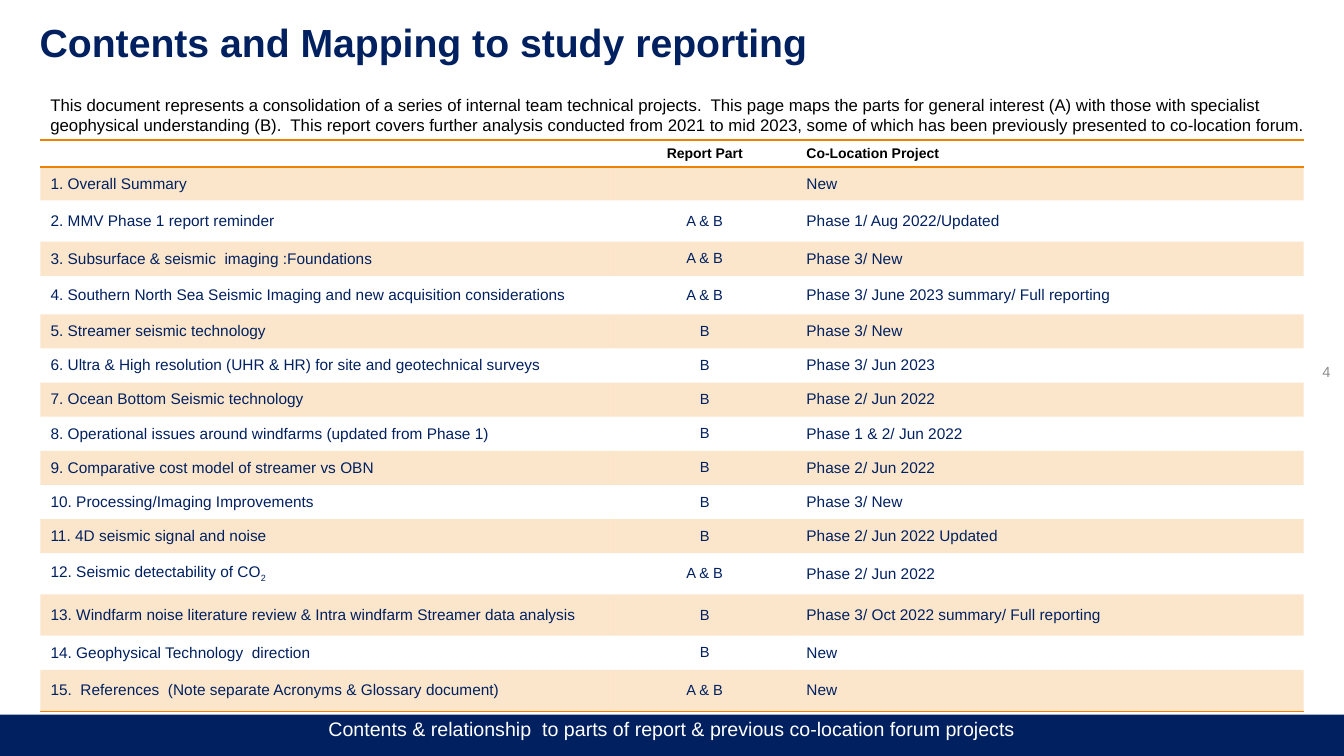
from dataclasses import dataclass

from lxml.etree import SubElement
from pptx import Presentation
from pptx.dml.color import RGBColor
from pptx.enum.shapes import MSO_SHAPE
from pptx.enum.text import MSO_ANCHOR, PP_ALIGN
from pptx.oxml.ns import qn
from pptx.util import Cm, Pt


@dataclass(frozen=True)
class Theme:
    font: str = "Arial"
    navy: str = "002060"
    amber: str = "EF8200"
    black: str = "000000"
    grey: str = "8C8C8C"
    white: str = "FFFFFF"
    title: float = 28
    foot: float = 14
    intro: float = 12
    cell: float = 11
    small: float = 10.5
    head: float = 10


THEME = Theme()
PLAIN = "{2D5ABB26-0587-4C30-8999-92F81FD0307C}"  # table style without grid
WIDTHS = [14.43, 4.62, 12.78]
HEAD = ("", "Report Part", "Co-Location Project")
HEAD_HIGH = 0.64
# Topic, report part, project, row height in cm
TOPICS = [
    ("1. Overall Summary", "", "New", 0.84),
    ("2. MMV Phase 1 report reminder", "A & B", "Phase 1/ Aug 2022/Updated", 1.04),
    ("3. Subsurface & seismic  imaging :Foundations", "A & B", "Phase 3/ New", 0.86),
    ("4. Southern North Sea Seismic Imaging and new acquisition considerations",
     "A & B", "Phase 3/ June 2023 summary/ Full reporting", 0.97),
    ("5. Streamer seismic technology", "B", "Phase 3/ New", 0.86),
    ("6. Ultra & High resolution (UHR & HR) for site and geotechnical surveys",
     "B", "Phase 3/ Jun 2023", 0.86),
    ("7. Ocean Bottom Seismic technology", "B", "Phase 2/ Jun 2022", 0.86),
    ("8. Operational issues around windfarms (updated from Phase 1)",
     "B", "Phase 1 & 2/ Jun 2022", 0.86),
    ("9. Comparative cost model of streamer vs OBN", "B", "Phase 2/ Jun 2022", 0.86),
    ("10. Processing/Imaging Improvements", "B", "Phase 3/ New", 0.86),
    ("11. 4D seismic signal and noise", "B", "Phase 2/ Jun 2022 Updated", 0.86),
    ("12. Seismic detectability of CO_2", "A & B", "Phase 2/ Jun 2022", 1.04),
    ("13. Windfarm noise literature review & Intra windfarm Streamer data analysis",
     "B", "Phase 3/ Oct 2022 summary/ Full reporting", 1.04),
    ("14. Geophysical Technology  direction", "B", "New", 0.86),
    ("15.  References  (Note separate Acronyms & Glossary document)",
     "A & B", "New", 1.04),
]


def write(frame, text, size, color, bold=False, align=PP_ALIGN.LEFT):
    """Fill a frame with one paragraph; an underscore starts a subscript."""
    frame.word_wrap = True
    para = frame.paragraphs[0]
    para.alignment = align
    font = para.font
    font.name, font.size, font.bold = THEME.font, Pt(size), bold
    font.color.rgb = RGBColor.from_string(color)
    main, _, sub = text.partition("_")
    if main:
        para.add_run().text = main
    else:
        # Keeps an empty cell from stretching its row
        SubElement(para._p, qn("a:endParaRPr")).set("sz", str(int(size * 100)))
    if sub:
        run = para.add_run()
        run.text = sub
        run.font._element.set("baseline", "-25000")
    return para


def add_title(slide, box):
    title = slide.shapes.title
    title.left, title.top, title.width, title.height = map(Cm, box)
    frame = title.text_frame
    frame.margin_left = frame.margin_top = 0
    frame.margin_right, frame.margin_bottom = Cm(0.25), Cm(0.13)
    frame.vertical_anchor = MSO_ANCHOR.MIDDLE
    para = write(frame, "Contents and Mapping to study reporting",
                 THEME.title, THEME.navy, True)
    para.line_spacing = 0.9


def add_note(slide, box, text, size, color, align=PP_ALIGN.LEFT,
             anchor=MSO_ANCHOR.TOP):
    frame = slide.shapes.add_textbox(*map(Cm, box)).text_frame
    frame.vertical_anchor = anchor
    write(frame, text, size, color, align=align)


def rule(cell, *sides):
    """Draw amber lines on the given sides, in the order top, bottom."""
    props = cell._tc.get_or_add_tcPr()
    for side in sides:
        line = SubElement(props, qn(f"a:{side}"), w=str(Pt(1)))
        fill = SubElement(line, qn("a:solidFill"))
        SubElement(fill, qn("a:srgbClr"), val=THEME.amber)


def shade(cell, band):
    """Tint a banded cell with see-through amber, leave others clear."""
    if not band:
        cell.fill.background()
        return
    cell.fill.solid()
    cell.fill.fore_color.rgb = RGBColor.from_string(THEME.amber)
    tint = cell._tc.tcPr.find(qn("a:solidFill")).find(qn("a:srgbClr"))
    SubElement(tint, qn("a:alpha"), val="20000")


def add_map(slide, left, top):
    rows = [(*HEAD, HEAD_HIGH), *TOPICS]
    high = sum(row[-1] for row in rows)
    table = slide.shapes.add_table(len(rows), len(WIDTHS), Cm(left), Cm(top),
                                   Cm(sum(WIDTHS)), Cm(high)).table
    table.first_row = table.horz_banding = False
    table._tbl.tblPr.find(qn("a:tableStyleId")).text = PLAIN
    for col, wide in zip(table.columns, WIDTHS):
        col.width = Cm(wide)

    for r, (*texts, high) in enumerate(rows):
        table.rows[r].height = Cm(high)
        for c, text in enumerate(texts):
            cell = table.cell(r, c)
            cell.vertical_anchor = MSO_ANCHOR.MIDDLE
            align = PP_ALIGN.CENTER if c == 1 else PP_ALIGN.LEFT
            if r == 0:
                write(cell.text_frame, text, THEME.head, THEME.black, True, align)
                rule(cell, "lnT", "lnB")
            else:
                size = THEME.small if c == 1 else THEME.cell
                write(cell.text_frame, text, size, THEME.navy, align=align)
            if r == len(rows) - 1:
                rule(cell, "lnB")
            shade(cell, r % 2 == 1)


def add_foot(slide, box):
    bar = slide.shapes.add_shape(MSO_SHAPE.RECTANGLE, *map(Cm, box))
    bar.shadow.inherit = False
    bar.fill.solid()
    bar.fill.fore_color.rgb = RGBColor.from_string(THEME.navy)
    bar.line.fill.background()
    bar.text_frame.vertical_anchor = MSO_ANCHOR.TOP
    para = write(
        bar.text_frame,
        "Contents & relationship  to parts of report & previous co-location forum projects",
        THEME.foot, THEME.white, align=PP_ALIGN.CENTER)
    para.line_spacing = 0.9


def main():
    deck = Presentation()
    deck.slide_width, deck.slide_height = Cm(33.87), Cm(19.05)
    slide = deck.slides.add_slide(deck.slide_layouts[5])

    # Heading, page number and introduction
    add_title(slide, (1, 0.74, 20.32, 0.91))
    add_note(slide, (31.93, 8.76, 1.85, 1.22), "4", THEME.small, THEME.grey,
             PP_ALIGN.RIGHT, MSO_ANCHOR.MIDDLE)
    add_note(
        slide, (1.02, 2.26, 32.36, 1.27),
        "This document represents a consolidation of a series of internal team "
        "technical projects.  This page maps the parts for general interest (A) "
        "with those with specialist geophysical understanding (B).  This report "
        "covers further analysis conducted from 2021 to mid 2023, some of which "
        "has been previously presented to co-location forum.",
        THEME.intro, THEME.black)

    # Mapping table and closing bar
    add_map(slide, 1.02, 3.53)
    add_foot(slide, (0, 18.01, 33.87, 1.04))
    deck.save("out.pptx")


if __name__ == "__main__":
    main()
